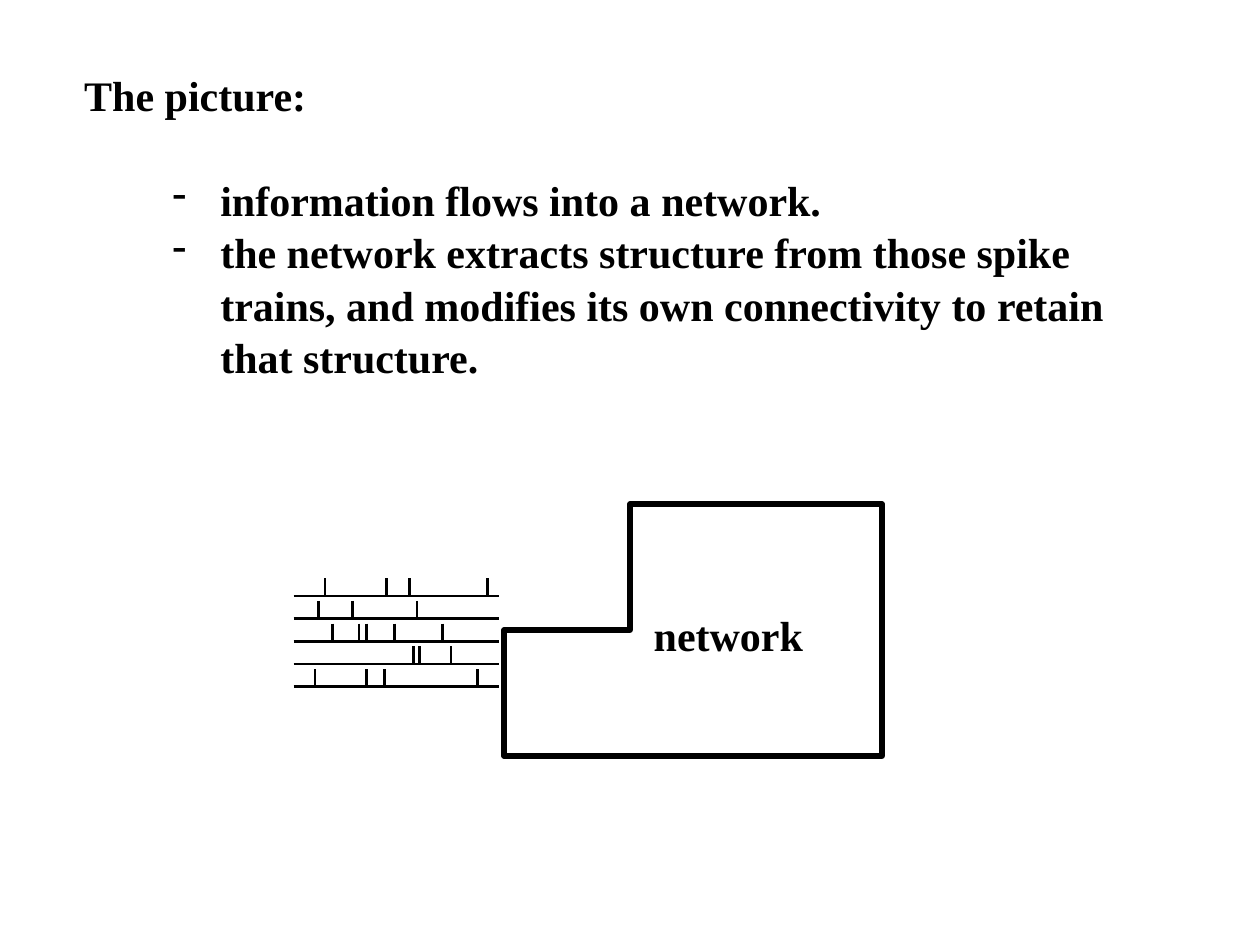
from lxml.etree import SubElement
from pptx import Presentation
from pptx.dml.color import RGBColor
from pptx.enum.shapes import MSO_CONNECTOR
from pptx.enum.text import MSO_AUTO_SIZE
from pptx.oxml.ns import qn
from pptx.util import Inches, Pt

BLACK = "000000"
FONT = {"name": "Times New Roman", "size": Pt(24), "bold": True}

TRAIN_LEFT, TRAIN_RIGHT = 2.33, 3.96
FIRST_TRAIN, TRAIN_STEP, SPIKE_HEIGHT = 4.73, 0.18, 0.14
SPIKE_TRAINS = [
    [2.58, 3.07, 3.25, 3.87],
    [2.53, 2.8, 3.31],
    [2.64, 2.85, 2.91, 3.13, 3.51],
    [3.28, 3.33, 3.58],
    [2.5, 2.91, 3.05, 3.79],
]

NETWORK_OUTLINE = [
    (5.93, 3.96), (5.84, 3.95), (5.76, 3.94), (5.66, 3.93), (5.57, 3.91),
    (5.51, 3.9), (5.45, 3.86), (5.39, 3.84), (5.25, 3.85), (5.21, 3.88),
    (5.16, 3.93), (5.11, 3.98), (5.03, 4.06), (5.02, 4.09), (4.98, 4.1),
    (4.92, 4.12), (4.87, 4.16), (4.82, 4.19), (4.8, 4.23), (4.77, 4.3),
    (4.75, 4.34), (4.73, 4.43), (4.74, 4.55), (4.74, 4.67), (4.74, 4.79),
    (4.72, 4.9), (4.67, 4.97), (4.61, 5.03), (4.54, 5.14), (4.47, 5.26),
    (4.46, 5.34), (4.46, 5.42), (4.47, 5.56), (4.51, 5.6), (4.57, 5.61),
    (4.64, 5.64), (4.71, 5.65), (4.77, 5.66), (5.11, 5.66), (5.12, 5.69),
    (5.15, 5.73), (5.18, 5.79), (5.21, 5.86), (5.24, 5.9), (5.32, 5.97),
    (5.37, 6.01), (5.47, 6.08), (5.58, 6.14), (5.66, 6.16), (5.73, 6.2),
    (5.84, 6.18), (5.97, 6.07), (6.08, 6.03), (6.3, 5.94), (6.49, 5.84),
    (6.66, 5.78), (6.71, 5.74), (6.75, 5.73), (6.77, 5.7), (6.82, 5.69),
    (6.87, 5.67), (6.96, 5.64), (7.03, 5.55), (7.11, 5.43), (7.13, 5.39),
    (7.12, 5.15), (7.11, 5.1), (7.07, 5.04), (7.03, 5), (6.93, 4.94),
    (6.87, 4.92), (6.79, 4.88), (6.75, 4.85), (6.72, 4.84), (6.68, 4.79),
    (6.66, 4.76), (6.64, 4.64), (6.64, 4.5), (6.63, 4.36), (6.6, 4.29),
    (6.55, 4.24), (6.52, 4.19), (6.51, 4.16), (6.43, 4.11), (6.37, 4.08),
    (6.31, 4.03), (6.28, 4.01), (6.26, 4), (6.22, 3.97), (6.08, 3.97),
]


def color(hex_value):
    return RGBColor.from_string(hex_value)


def add_bullet(paragraph):
    properties = paragraph._p.get_or_add_pPr()
    properties.set("marL", str(Inches(0.38)))
    properties.set("indent", str(Inches(-0.38)))
    SubElement(properties, qn("a:buChar")).set("char", "-")


def add_text(slide, box, lines, wrap=False, bulleted=False):
    shape = slide.shapes.add_textbox(*map(Inches, box))
    frame = shape.text_frame
    frame.word_wrap = wrap
    frame.auto_size = MSO_AUTO_SIZE.SHAPE_TO_FIT_TEXT
    for index, line in enumerate(lines):
        paragraph = frame.paragraphs[0] if index == 0 else frame.add_paragraph()
        paragraph.line_spacing = 1.04
        if bulleted:
            add_bullet(paragraph)
        run = paragraph.add_run()
        run.text = line
        for name, value in FONT.items():
            setattr(run.font, name, value)
        run.font.color.rgb = color(BLACK)


def add_line(shapes, start, end):
    connector = shapes.add_connector(
        MSO_CONNECTOR.STRAIGHT, *map(Inches, (*start, *end)))
    connector.line.color.rgb = color(BLACK)
    connector.line.width = Pt(1.5)
    SubElement(connector._element.spPr, qn("a:effectLst"))


def add_spike_trains(slide):
    group = slide.shapes.add_group_shape()
    for row, spikes in enumerate(SPIKE_TRAINS):
        y = FIRST_TRAIN + row * TRAIN_STEP
        add_line(group.shapes, (TRAIN_LEFT, y), (TRAIN_RIGHT, y))
        for x in spikes:
            add_line(group.shapes, (x, y - SPIKE_HEIGHT), (x, y))


def add_network(slide):
    start, *rest = NETWORK_OUTLINE
    builder = slide.shapes.build_freeform(*start, scale=Inches(1))
    builder.add_line_segments(rest, close=True)
    shape = builder.convert_to_shape()
    shape.shadow.inherit = False
    shape.fill.background()
    shape.line.color.rgb = color(BLACK)
    shape.line.width = Pt(3)


def main():
    presentation = Presentation()
    presentation.slide_width = Inches(10)
    presentation.slide_height = Inches(7.5)
    slide = presentation.slides.add_slide(presentation.slide_layouts[6])
    add_network(slide)
    add_text(slide, (5.09, 4.77, 1.4, 0.5), ["network"])
    add_spike_trains(slide)
    add_text(slide, (0.57, 0.49, 1.98, 0.5), ["The picture:"])
    add_text(slide, (1.27, 1.32, 7.71, 1.72), [
        "information flows into a network.",
        "the network extracts structure from those spike trains, "
        "and modifies its own connectivity to retain that structure.",
    ], wrap=True, bulleted=True)
    presentation.save("out.pptx")


if __name__ == "__main__":
    main()
